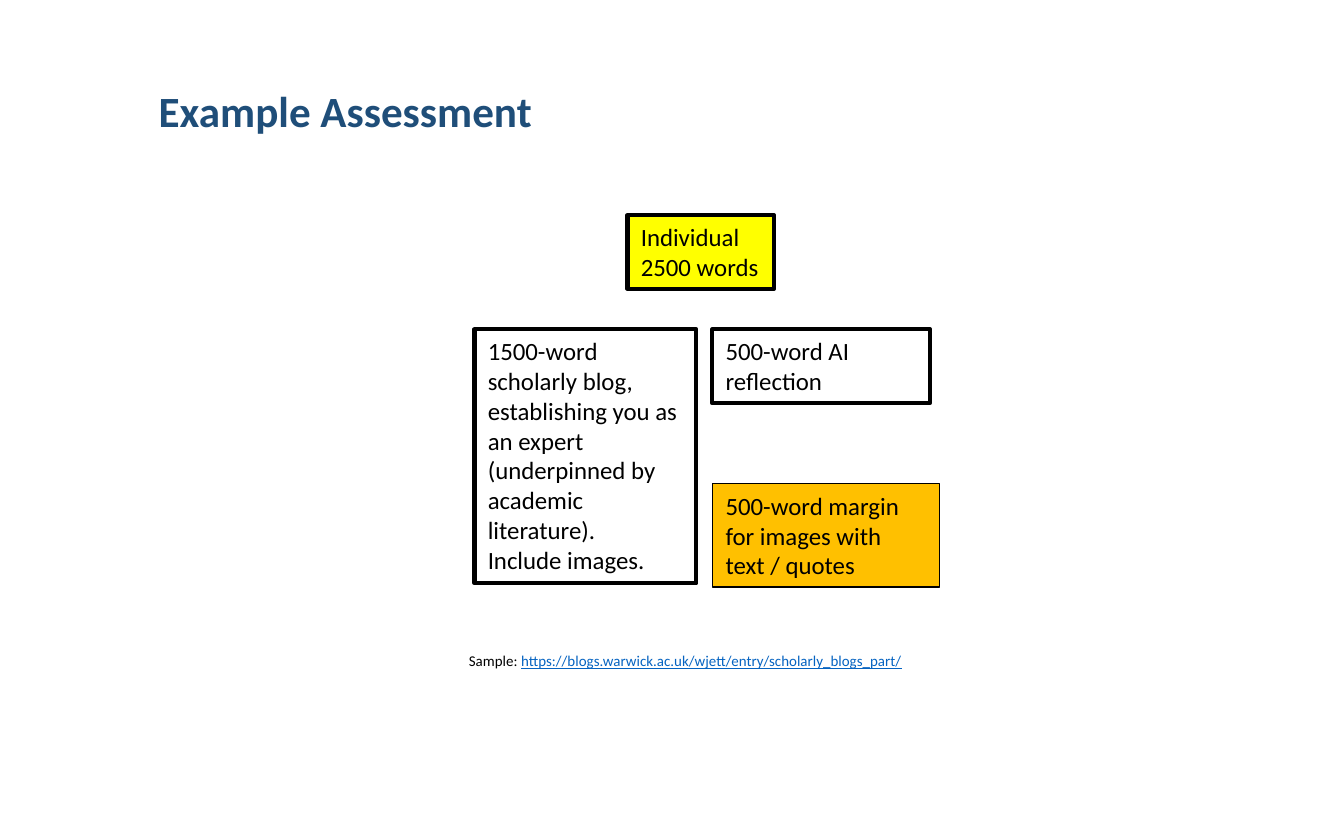
import pptx
import pptx.util
import pptx.dml.color
import pptx.enum.text

Pt = pptx.util.Pt
FONT = "Calibri"
COLOURS = {
    "black": "000000",
    "title": "1F4E79",
    "link": "0563C1",
    "total": "FFFF00",
    "margin": "FFC000",
}
LEFT_COLUMN, RIGHT_COLUMN = 254.2, 381.6
PARTS_TOP = 176.4


def rgb(name):
    return pptx.dml.color.RGBColor.from_string(COLOURS[name])


def format_font(font, size, colour="black"):
    font.name = FONT
    font.size = Pt(size)
    font.color.rgb = rgb(colour)


def add_title(slide, text):
    title = slide.shapes.title
    title.left, title.top, title.width, title.height = map(Pt, (77.8, 17.3, 517.7, 87.1))
    frame = title.text_frame
    frame.text = text
    frame.word_wrap = True
    frame.vertical_anchor = pptx.enum.text.MSO_ANCHOR.MIDDLE
    heading = frame.paragraphs[0]
    heading.alignment = pptx.enum.text.PP_ALIGN.LEFT
    heading.line_spacing = 0.9
    format_font(heading.runs[0].font, 23.1, "title")
    heading.runs[0].font.bold = True


def add_box(slide, text, left, top, width, height, fill=None, border=2.25, wrap=True):
    """Add an outlined box; each line of text becomes a paragraph."""
    box = slide.shapes.add_textbox(Pt(left), Pt(top), Pt(width), Pt(height))
    if fill:
        box.fill.solid()
        box.fill.fore_color.rgb = rgb(fill)
    box.line.color.rgb = rgb("black")
    box.line.width = Pt(border)
    frame = box.text_frame
    frame.text = text
    frame.word_wrap = wrap
    frame.auto_size = pptx.enum.text.MSO_AUTO_SIZE.SHAPE_TO_FIT_TEXT
    for paragraph in frame.paragraphs:
        format_font(paragraph.runs[0].font, 13.3)


def add_sample(slide, label, address):
    sample = slide.shapes.add_textbox(Pt(244.1), Pt(345.6), Pt(275.8), Pt(17.3))
    frame = sample.text_frame
    frame.word_wrap = True
    for text, colour in ((label, "black"), (address, "link")):
        run = frame.paragraphs[0].add_run()
        run.text = text
        format_font(run.font, 8, colour)
        run.font.underline = colour == "link"


def main():
    deck = pptx.Presentation()
    deck.slide_width, deck.slide_height = Pt(720), Pt(450)
    slide = deck.slides.add_slide(deck.slide_layouts[5])

    add_title(slide, "Example Assessment")
    add_box(slide, "Individual\n2500 words", 336.2, 115.2, 78.5, 39.6,
            fill="total", wrap=False)
    add_box(slide,
            "1500-word scholarly blog, establishing you as an expert "
            "(underpinned by academic literature).\nInclude images.",
            LEFT_COLUMN, PARTS_TOP, 118.8, 136.1)
    add_box(slide, "500-word AI reflection", RIGHT_COLUMN, PARTS_TOP, 116.6, 39.6)
    add_box(slide, "500-word margin for images with text / quotes",
            RIGHT_COLUMN, 259.2, 121.7, 55.4, fill="margin", border=0.75)
    add_sample(slide, "Sample: ",
               "https://blogs.warwick.ac.uk/wjett/entry/scholarly_blogs_part/")

    deck.save("out.pptx")


if __name__ == "__main__":
    main()
